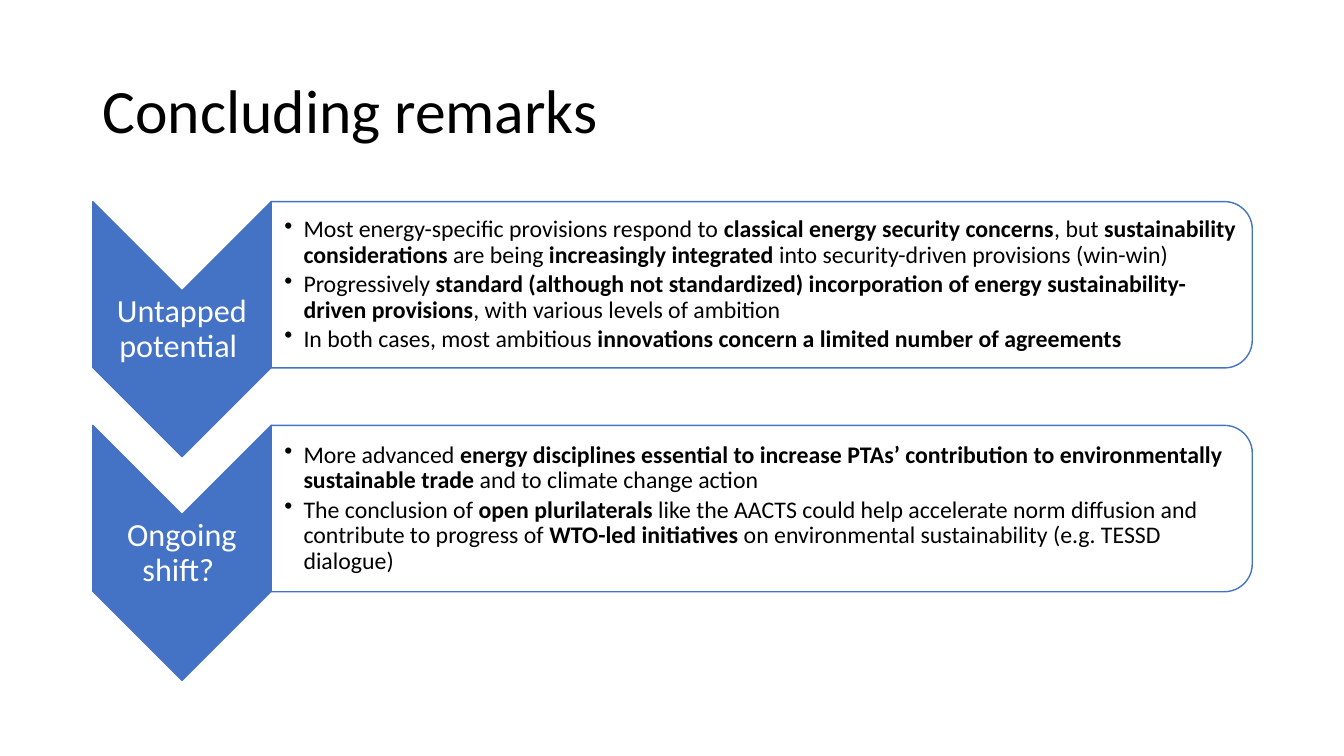
import dataclasses

import pptx
import pptx.dml.color
import pptx.enum.shapes
import pptx.enum.text
import pptx.oxml
import pptx.oxml.ns
import pptx.util
from pptx.util import Inches

BLUE = pptx.dml.color.RGBColor(0x44, 0x72, 0xC4)
WHITE = pptx.dml.color.RGBColor(0xFF, 0xFF, 0xFF)
BLACK = pptx.dml.color.RGBColor(0, 0, 0)
FONT = "Calibri"
SHAPES = pptx.enum.shapes.MSO_SHAPE
ALIGN = pptx.enum.text.PP_ALIGN
TOP = 2.0
PITCH = 2.22


@dataclasses.dataclass
class Remark:
    label: str
    points: list[str]


@dataclasses.dataclass
class Box:
    left: float
    top: float
    width: float
    height: float


REMARKS = [
    Remark("Untapped potential ", [
        "Most energy-specific provisions respond to *classical energy security concerns*, but "
        "*sustainability considerations *are being *increasingly integrated *into "
        "security-driven provisions (win-win)",
        "Progressively *standard (although not standardized) incorporation of energy "
        "sustainability-driven provisions*, with various levels of ambition",
        "In both cases, most ambitious *innovations concern a limited number of agreements",
    ]),
    Remark("Ongoing shift? ", [
        "More advanced *energy disciplines essential to increase PTAs’ contribution to "
        "environmentally sustainable trade *and to climate change action",
        "The conclusion of *open plurilaterals *like the AACTS could help accelerate norm "
        "diffusion and contribute to progress of *WTO-led initiatives *on environmental "
        "sustainability (e.g. TESSD dialogue)",
    ]),
]


def add_turned(slide, kind: SHAPES, box: Box, fill: pptx.dml.color.RGBColor):
    left = box.left + (box.width - box.height) / 2
    top = box.top + (box.height - box.width) / 2
    shape = slide.shapes.add_shape(
        kind, Inches(left), Inches(top), Inches(box.height), Inches(box.width))
    shape.rotation = 90
    shape.shadow.inherit = False
    shape.fill.solid()
    shape.fill.fore_color.rgb = fill
    shape.line.color.rgb = BLUE
    shape.line.width = pptx.util.Pt(1)
    return shape


def add_text(slide, box: Box, inset: float, indent: float):
    shape = slide.shapes.add_textbox(
        Inches(box.left), Inches(box.top), Inches(box.width), Inches(box.height))
    frame = shape.text_frame
    frame.word_wrap = True
    frame.vertical_anchor = pptx.enum.text.MSO_ANCHOR.MIDDLE
    frame.margin_left = Inches(indent)
    frame.margin_right = frame.margin_top = frame.margin_bottom = Inches(inset)
    return frame


def style(para, size: float, color: pptx.dml.color.RGBColor) -> None:
    para.line_spacing = 0.9
    para.font.name = FONT
    para.font.size = pptx.util.Pt(size)
    para.font.color.rgb = color


def add_bullet(para) -> None:
    props = para._p.get_or_add_pPr()
    props.set("marL", str(Inches(0.19)))
    props.set("indent", str(-Inches(0.19)))
    mark = pptx.oxml.parse_xml(
        f'<a:buChar {pptx.oxml.ns.nsdecls("a")} char="•"/>')
    props.insert_element_before(mark, "a:tabLst", "a:defRPr", "a:extLst")


def add_remark(slide, remark: Remark, top: float) -> None:
    panel = add_turned(slide, SHAPES.ROUND_2_SAME_RECTANGLE,
                       Box(2.69, top, 9.73, 1.65), WHITE)
    color = panel.fill._xPr.find(".//" + pptx.oxml.ns.qn("a:srgbClr"))
    color.append(pptx.oxml.parse_xml(
        f'<a:alpha {pptx.oxml.ns.nsdecls("a")} val="90000"/>'))
    add_turned(slide, SHAPES.CHEVRON, Box(0.92, top, 1.77, 2.53), BLUE)

    label = add_text(slide, Box(0.92, top + 0.89, 1.77, 0.76), 0.02, 0.02).paragraphs[0]
    label.text = remark.label
    label.alignment = ALIGN.CENTER
    style(label, 23, WHITE)

    frame = add_text(slide, Box(2.69, top + 0.08, 9.65, 1.49), 0.01, 0.13)
    for index, point in enumerate(remark.points):
        para = frame.add_paragraph() if index else frame.paragraphs[0]
        for turn, piece in enumerate(point.split("*")):
            run = para.add_run()
            run.text = piece
            run.font.bold = turn % 2 == 1
        style(para, 17, BLACK)
        para.space_after = pptx.util.Pt(2.5)
        add_bullet(para)


def main() -> None:
    deck = pptx.Presentation()
    deck.slide_width = Inches(13.33)
    deck.slide_height = Inches(7.5)
    slide = deck.slides.add_slide(deck.slide_layouts[6])
    title = add_text(slide, Box(0.92, 0.4, 11.5, 1.45), 0.05, 0.1).paragraphs[0]
    title.text = "Concluding remarks"
    style(title, 44, BLACK)
    for index, remark in enumerate(REMARKS):
        add_remark(slide, remark, TOP + index * PITCH)
    deck.save("out.pptx")


if __name__ == "__main__":
    main()
